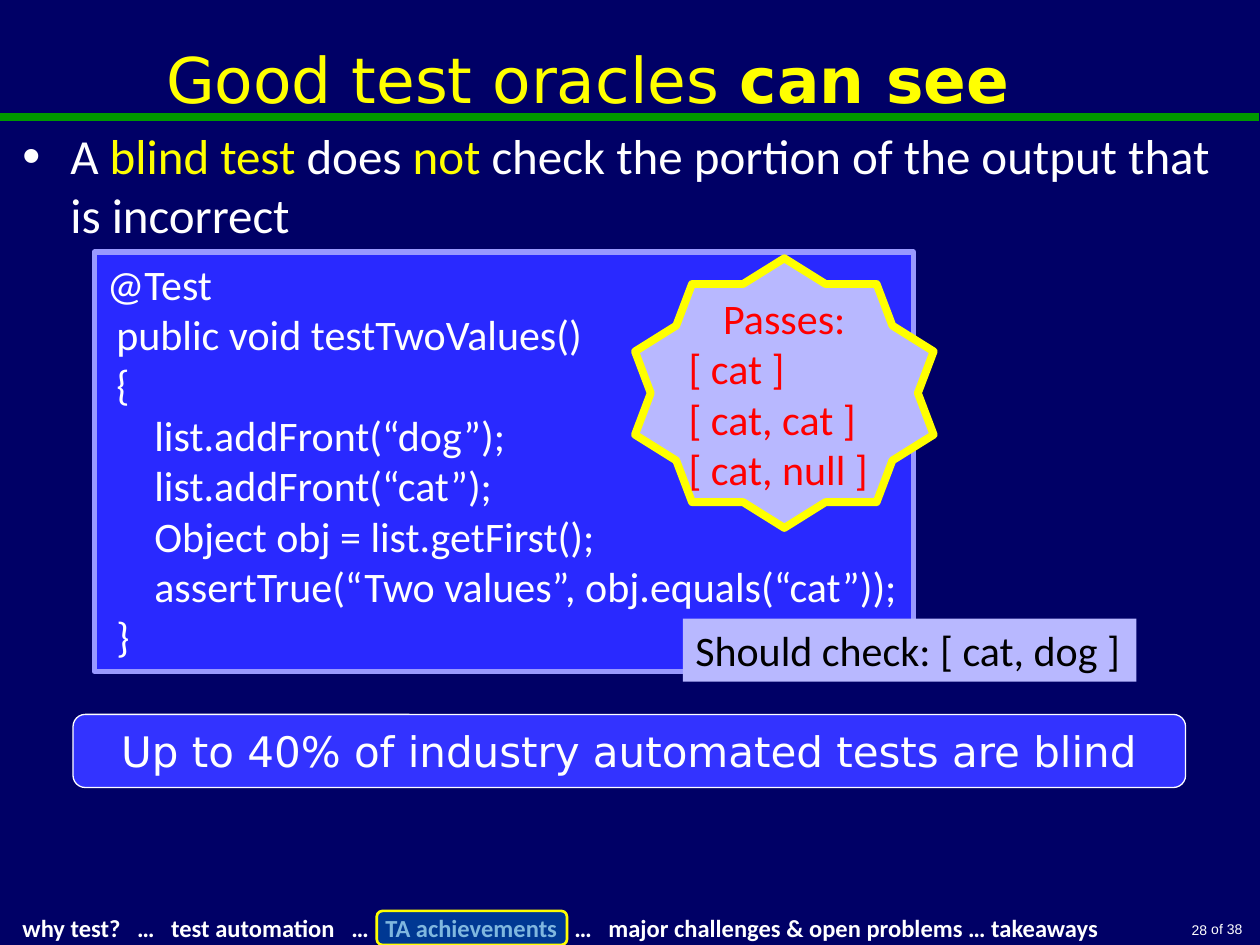
"""Build the slide on test oracles that can see."""
from dataclasses import dataclass
from typing import Optional

from lxml.etree import SubElement
from pptx import Presentation
from pptx.dml.color import RGBColor
from pptx.enum.shapes import MSO_CONNECTOR, MSO_SHAPE
from pptx.enum.text import MSO_ANCHOR, PP_ALIGN
from pptx.oxml.ns import qn
from pptx.util import Inches, Pt


@dataclass(frozen=True)
class Theme:
    navy: str = "000066"
    green: str = "009900"
    white: str = "FFFFFF"
    black: str = "000000"
    yellow: str = "FFFF00"
    red: str = "FF0000"
    code: str = "2929FF"
    banner: str = "3333FF"
    edge: str = "9999FF"
    pale: str = "B8B8FF"
    marker: str = "0070C0"
    sans: str = "Calibri"
    display: str = "DejaVu Sans"
    small: str = "Arial"
    title_pt: int = 36
    body_pt: int = 28
    text_pt: int = 24
    nav_pt: int = 14
    number_pt: int = 8


T = Theme()


@dataclass(frozen=True)
class Style:
    size: int = T.text_pt
    color: str = T.white
    font: str = T.sans
    bold: bool = False


@dataclass(frozen=True)
class Box:
    at: tuple[float, float, float, float]
    lines: tuple[str, ...] = ()
    style: Style = Style()
    shape: Optional[MSO_SHAPE] = None
    fill: Optional[str] = None
    alpha: int = 100
    line: Optional[str] = None
    width: float = 0
    first: PP_ALIGN = PP_ALIGN.LEFT
    anchor: MSO_ANCHOR = MSO_ANCHOR.TOP
    wrap: bool = True


NUMBER = Style(T.number_pt, T.white, T.small)
NAV = ("why test?", "…", "test automation", "…", "TA achievements", "…",
       "major challenges & open problems … takeaways")
NAV_STOPS = (0.91, 1.18, 2.61, 2.88, 4.38, 4.65)
CODE = (
    "@Test",
    " public void testTwoValues()",
    " {",
    "     list.addFront(“dog”);",
    "     list.addFront(“cat”);",
    "     Object obj = list.getFirst();",
    "     assertTrue(“Two values”, obj.equals(“cat”));",
    " }",
)
BOXES = (
    Box((9.5, 7.26, 0.46, 0.24), ("of 38",), NUMBER, first=PP_ALIGN.RIGHT),
    Box((7.87, 7.23, 1.81, 0.27), ("28",), NUMBER, first=PP_ALIGN.RIGHT,
        anchor=MSO_ANCHOR.BOTTOM),
    Box((0.75, 2, 6.5, 3.33), CODE, shape=MSO_SHAPE.RECTANGLE,
        fill=T.code, line=T.edge, width=3),
    Box((5.04, 2.05, 2.37, 2.14),
        ("Passes:", "[ cat ]", "[ cat, cat ]", "[ cat, null ]"),
        Style(color=T.red), MSO_SHAPE.STAR_10_POINT, T.pale,
        line=T.yellow, width=4.5, first=PP_ALIGN.CENTER,
        anchor=MSO_ANCHOR.MIDDLE),
    Box((5.42, 4.91, 3.6, 0.5), ("Should check: [ cat, dog ]",),
        Style(color=T.black), MSO_SHAPE.RECTANGLE, T.pale, wrap=False),
    Box((0.58, 5.67, 8.83, 0.58),
        ("Up to 40% of industry automated tests are blind",),
        Style(font=T.display), MSO_SHAPE.ROUNDED_RECTANGLE, T.banner,
        line=T.white, width=0.75, first=PP_ALIGN.CENTER,
        anchor=MSO_ANCHOR.MIDDLE),
)
NAV_BOX = Box((0.08, 7.2, 8.75, 0.34), ("\t".join(NAV),),
              Style(T.nav_pt, bold=True))
NAV_MARK = Box((2.99, 7.23, 1.51, 0.27), shape=MSO_SHAPE.ROUNDED_RECTANGLE,
               fill=T.marker, alpha=50, line=T.yellow, width=1.5)


def rgb(color: str) -> RGBColor:
    return RGBColor.from_string(color)


def format_run(r, style: Style) -> None:
    r.font.size = Pt(style.size)
    r.font.name = style.font
    r.font.bold = style.bold
    r.font.color.rgb = rgb(style.color)


def add_runs(p, parts: tuple[tuple[str, Style], ...]) -> None:
    for text, style in parts:
        r = p.add_run()
        r.text = text
        format_run(r, style)


def paint(sp, box: Box) -> None:
    sp.shadow.inherit = False
    sp.fill.solid()
    sp.fill.fore_color.rgb = rgb(box.fill)
    if box.alpha < 100:
        color = sp.fill._xPr.find(qn("a:solidFill"))[0]
        SubElement(color, qn("a:alpha"), val=str(box.alpha * 1000))
    if box.line:
        sp.line.color.rgb = rgb(box.line)
        sp.line.width = Pt(box.width)
    else:
        sp.line.fill.background()


def add_box(s, box: Box):
    at = [Inches(v) for v in box.at]
    if box.shape is None:
        sp = s.shapes.add_textbox(*at)
    else:
        sp = s.shapes.add_shape(box.shape, *at)
        paint(sp, box)
    if box.lines:
        tf = sp.text_frame
        tf.text = "\n".join(box.lines)
        tf.word_wrap = box.wrap
        tf.vertical_anchor = box.anchor
        for i, p in enumerate(tf.paragraphs):
            p.alignment = PP_ALIGN.LEFT if i else box.first
            for r in p.runs:
                format_run(r, box.style)
    return sp


def add_title(s) -> None:
    sp = s.shapes.title
    sp.left, sp.top, sp.width, sp.height = map(Inches, (0.08, 0, 9.17, 1.25))
    tf = sp.text_frame
    tf.vertical_anchor = MSO_ANCHOR.MIDDLE
    p = tf.paragraphs[0]
    p.alignment = PP_ALIGN.CENTER
    add_runs(p, (
        ("Good test oracles ", Style(T.title_pt, T.yellow, T.display)),
        ("can see", Style(T.title_pt, T.yellow, T.display, True)),
    ))


def add_bullet(s) -> None:
    tf = add_box(s, Box((0.08, 0.95, 9.83, 1.14))).text_frame
    tf.word_wrap = True
    p = tf.paragraphs[0]
    pPr = p._p.get_or_add_pPr()
    pPr.set("marL", str(Inches(0.38)))
    pPr.set("indent", str(-Inches(0.38)))
    SubElement(SubElement(pPr, qn("a:buClr")), qn("a:srgbClr"), val=T.white)
    SubElement(pPr, qn("a:buSzPct"), val="105000")
    SubElement(pPr, qn("a:buFont"), typeface=T.small)
    SubElement(pPr, qn("a:buChar"), char="•")
    plain, key = Style(T.body_pt), Style(T.body_pt, T.yellow)
    add_runs(p, (
        ("A ", plain), ("blind test ", key), ("does ", plain), ("not", key),
        (" check the portion of the output that is incorrect", plain),
    ))


def add_nav(s) -> None:
    p = add_box(s, NAV_BOX).text_frame.paragraphs[0]
    tabs = SubElement(p._p.get_or_add_pPr(), qn("a:tabLst"))
    for stop in NAV_STOPS:
        SubElement(tabs, qn("a:tab"), pos=str(Inches(stop)), algn="l")
    add_box(s, NAV_MARK)


def add_rule(s) -> None:
    y = Inches(0.93)
    ln = s.shapes.add_connector(MSO_CONNECTOR.STRAIGHT, 0, y, Inches(9.99), y)
    ln.line.color.rgb = rgb(T.green)
    ln.line.width = Pt(4.5)
    SubElement(ln._element.spPr, qn("a:effectLst"))


def main() -> None:
    prs = Presentation()
    prs.slide_width, prs.slide_height = Inches(10), Inches(7.5)
    s = prs.slides.add_slide(prs.slide_layouts[5])
    s.background.fill.solid()
    s.background.fill.fore_color.rgb = rgb(T.navy)
    add_rule(s)
    add_title(s)
    add_bullet(s)
    for box in BOXES:
        add_box(s, box)
    add_nav(s)
    prs.save("out.pptx")


if __name__ == "__main__":
    main()
